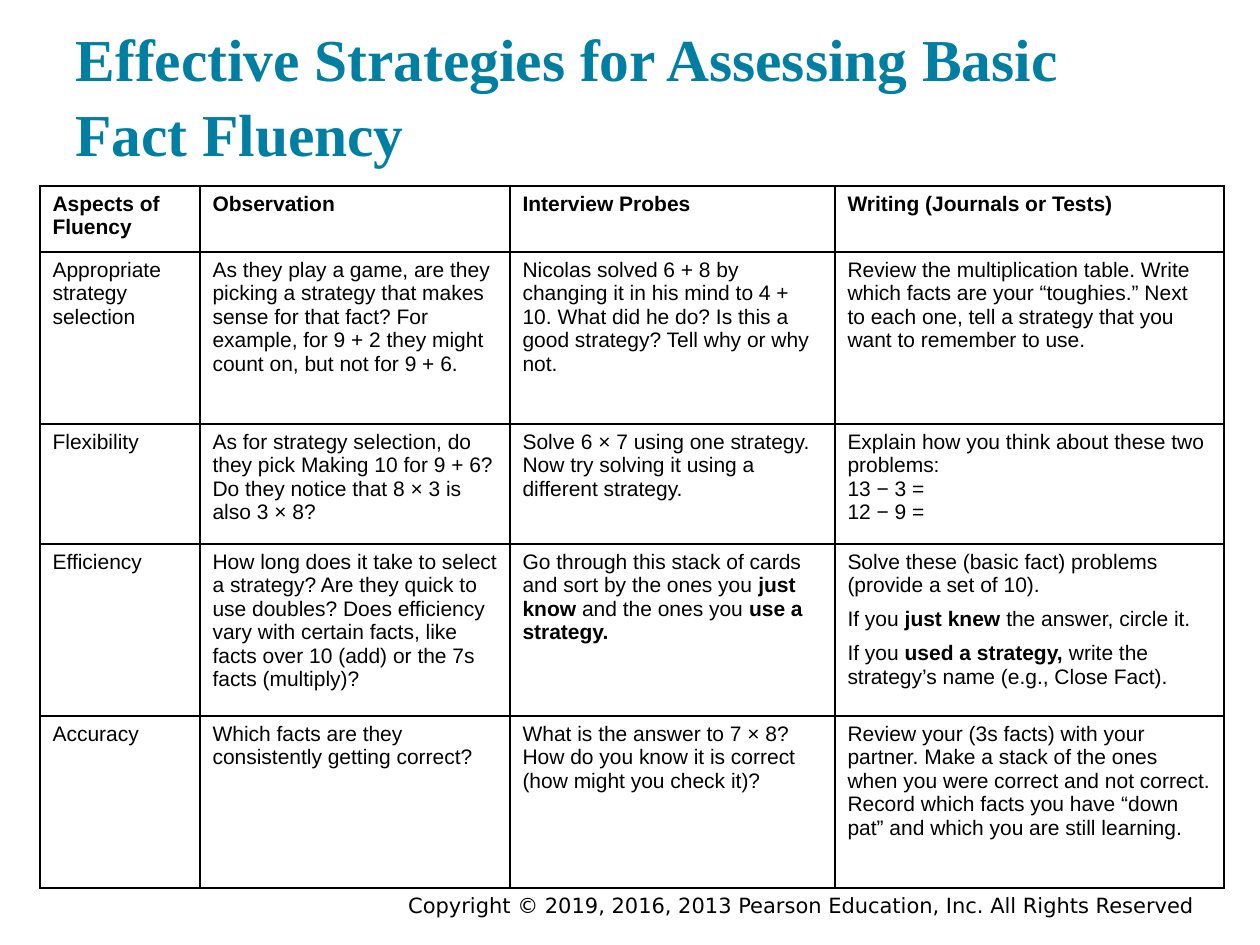
from lxml import etree
from pptx import Presentation
from pptx import util as u
from pptx.dml.color import RGBColor
from pptx.enum import text
from pptx.oxml.ns import qn

PX = 914400 / 126  # EMU in one px
COLUMNS = [160, 310, 325, 389]
ROWS = [66, 172, 120, 172, 172]

# Double asterisks switch bold on and off; a line break starts a paragraph
CELLS = [
    ["**Aspects of Fluency**", "**Observation**", "**Interview Probes**",
     "**Writing (Journals or Tests)**"],
    ["Appropriate strategy selection",
     "As they play a game, are they picking a strategy that makes sense for "
     "that fact? For example, for 9 + 2 they might count on, but not for 9 + 6.",
     "Nicolas solved 6 + 8 by changing it in his mind to 4 + 10. What did he "
     "do? Is this a good strategy? Tell why or why not.",
     "Review the multiplication table. Write which facts are your “toughies.” "
     "Next to each one, tell a strategy that you want to remember to use."],
    ["Flexibility",
     "As for strategy selection, do they pick Making 10 for 9 + 6? Do they "
     "notice that 8 × 3 is also 3 × 8?",
     "Solve 6 × 7 using one strategy. Now try solving it using a different "
     "strategy.",
     "Explain how you think about these two problems:\n13 − 3 =\n12 − 9 ="],
    ["Efficiency",
     "How long does it take to select a strategy? Are they quick to use "
     "doubles? Does efficiency vary with certain facts, like facts over 10 "
     "(add) or the 7s facts (multiply)?",
     "Go through this stack of cards and sort by the ones you **just know "
     "**and the ones you **use a strategy.**",
     "Solve these (basic fact) problems (provide a set of 10).\n"
     "If you **just knew **the answer, circle it.\n"
     "If you **used a strategy, **write the strategy’s name (e.g., Close Fact)."],
    ["Accuracy",
     "Which facts are they consistently getting correct?",
     "What is the answer to 7 × 8? How do you know it is correct (how might "
     "you check it)?",
     "Review your (3s facts) with your partner. Make a stack of the ones when "
     "you were correct and not correct. Record which facts you have “down "
     "pat” and which you are still learning."],
]


def px(n):
    return u.Emu(round(n * PX))


def color(value):
    return RGBColor.from_string(value)


def write(tf, content, size=12, font="Arial", fill="000000", bold=False,
          align=text.PP_ALIGN.LEFT, gap=0, spacing=None):
    """Fill a text frame; gap is the space in points between paragraphs."""
    tf.word_wrap = True
    for i, line in enumerate(content.split("\n")):
        p = tf.add_paragraph() if i else tf.paragraphs[0]
        p.alignment = align
        p.space_before = u.Pt(gap if i else 0)
        if spacing:
            p.line_spacing = spacing
        for j, part in enumerate(line.split("**")):
            if part:
                r = p.add_run()
                r.text = part
                r.font.size, r.font.name = u.Pt(size), font
                r.font.bold = bold or j % 2 == 1
                r.font.color.rgb = color(fill)


class Deck:
    ink = "000000"
    accent = "007FA3"

    def __init__(self, width, height):
        self.prs = Presentation()
        self.prs.slide_width, self.prs.slide_height = px(width), px(height)
        self.s = self.prs.slides.add_slide(self.prs.slide_layouts[5])

    def title(self, content, x, y, w, h):
        sp = self.s.shapes.title
        sp.left, sp.top, sp.width, sp.height = map(px, (x, y, w, h))
        tf = sp.text_frame
        tf.auto_size = text.MSO_AUTO_SIZE.NONE
        tf.vertical_anchor = text.MSO_ANCHOR.BOTTOM
        tf.margin_left = tf.margin_right = u.Inches(0.1)
        tf.margin_top = tf.margin_bottom = u.Inches(0.1)
        write(tf, content, size=34, font="Times New Roman", fill=self.accent,
              bold=True, spacing=1.05)

    def label(self, content, x, y, w, h, **style):
        tf = self.s.shapes.add_textbox(*map(px, (x, y, w, h))).text_frame
        tf.vertical_anchor = text.MSO_ANCHOR.MIDDLE
        write(tf, content, fill=self.ink, **style)

    def border(self, cell):
        tcPr = cell._tc.get_or_add_tcPr()
        for i, side in enumerate(("a:lnL", "a:lnR", "a:lnT", "a:lnB")):
            ln = etree.Element(qn(side), w=str(u.Pt(1)))
            fill = etree.SubElement(ln, qn("a:solidFill"))
            etree.SubElement(fill, qn("a:srgbClr"), val=self.ink)
            tcPr.insert(i, ln)

    def table(self, cells, x, y, columns, rows, **style):
        frame = self.s.shapes.add_table(len(rows), len(columns), px(x), px(y),
                                        px(sum(columns)), px(sum(rows)))
        table = frame.table
        table.horz_banding = False
        for col, w in zip(table.columns, columns):
            col.width = px(w)
        for row, h, contents in zip(table.rows, rows, cells):
            row.height = px(h)
            for cell, content in zip(row.cells, contents):
                cell.fill.background()
                self.border(cell)
                # Full sentences are set apart, short sums are not
                gap = 6 if "\nIf" in content else 0
                write(cell.text_frame, content, fill=self.ink, gap=gap, **style)


def main():
    deck = Deck(1260, 945)
    # Footer
    deck.label("Copyright © 2019, 2016, 2013 Pearson Education, Inc. "
               "All Rights Reserved", 368, 889, 839, 32,
               font="DejaVu Sans", align=text.PP_ALIGN.RIGHT)
    # Heading
    deck.title("Effective Strategies for Assessing Basic Fact Fluency",
               63, 30, 1134, 151)
    # Strategy table
    deck.table(CELLS, 40, 186, COLUMNS, ROWS)
    deck.prs.save("out.pptx")


if __name__ == "__main__":
    main()
